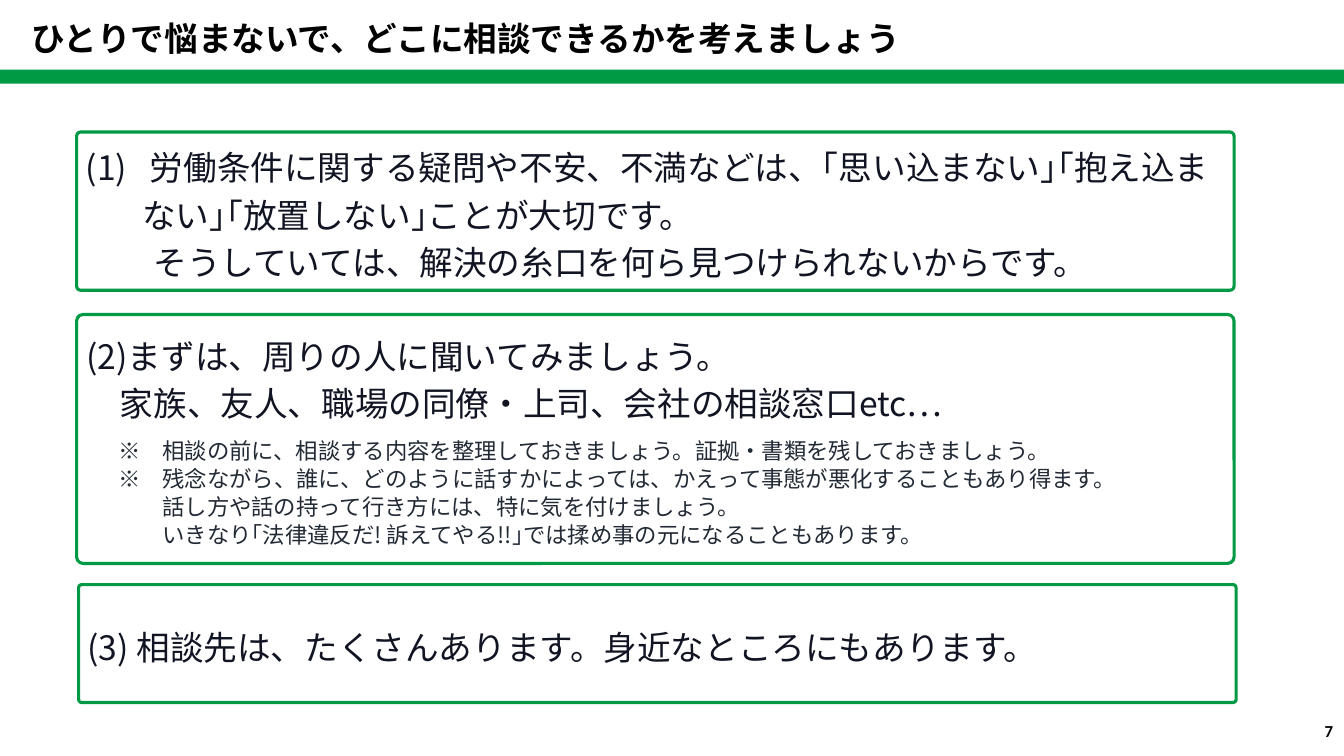
from lxml import etree
from pptx import Presentation, util as u
from pptx.dml.color import RGBColor
from pptx.enum import shapes, text
from pptx.oxml.ns import qn

COLORS = {"green": "009944", "white": "FFFFFF", "body": "111422",
          "note": "222A35", "black": "000000"}
JAPANESE = "Noto Sans CJK JP"
TOP, MIDDLE = text.MSO_ANCHOR.TOP, text.MSO_ANCHOR.MIDDLE


def color(name):
    return RGBColor.from_string(COLORS[name])


def add_panel(page, kind, place, fill=None, line=None):
    """Add a flat shape with an optional fill and outline."""
    panel = page.shapes.add_shape(kind, *map(u.Inches, place))
    panel.shadow.inherit = False
    if fill:
        panel.fill.solid()
        panel.fill.fore_color.rgb = color(fill)
    else:
        panel.fill.background()
    if line:
        panel.line.color.rgb = color(line)
        panel.line.width = u.Pt(2.25)
    else:
        panel.line.fill.background()
    return panel


def format_span(span, size, ink, font=JAPANESE, bold=False):
    span.font.size = u.Pt(size)
    span.font.bold = bold
    span.font.name = font
    span.font.color.rgb = color(ink)
    east_asian = etree.SubElement(span.font._element, qn("a:ea"))
    east_asian.set("typeface", font)


def write_lines(panel, lines, size, spacing, ink, anchor=MIDDLE, top=0.04):
    """Write (left indent, text) pairs with fixed line spacing."""
    frame = panel.text_frame
    frame.word_wrap = True
    frame.vertical_anchor = anchor
    frame.margin_left, frame.margin_top = u.Inches(0.08), u.Inches(top)
    frame.margin_right = frame.margin_bottom = u.Inches(0.04)
    for index, (indent, words) in enumerate(lines):
        para = frame.add_paragraph() if index else frame.paragraphs[0]
        para.text = words
        para.alignment = text.PP_ALIGN.LEFT
        para.line_spacing = u.Pt(spacing)
        para._p.get_or_add_pPr().set("marL", str(u.Inches(indent)))
        format_span(para.runs[0], size, ink)


def number_paragraph(para, hang):
    """Give a paragraph an automatic (1) with a hanging indent."""
    properties = para._p.get_or_add_pPr()
    properties.set("indent", str(-u.Inches(hang)))
    font = etree.SubElement(properties, qn("a:buFont"))
    font.set("typeface", JAPANESE)
    number = etree.SubElement(properties, qn("a:buAutoNum"))
    number.set("type", "arabicParenBoth")


def add_rounded(page, place, framed=True):
    look = ("white", "green") if framed else ()
    panel = add_panel(page, shapes.MSO_SHAPE.ROUNDED_RECTANGLE, place, *look)
    panel.adjustments[0] = 0.026
    return panel


def add_label(page, place, words, size, font=JAPANESE,
              align=text.PP_ALIGN.LEFT, anchor=TOP):
    box = page.shapes.add_textbox(*map(u.Inches, place))
    frame = box.text_frame
    frame.word_wrap = True
    frame.vertical_anchor = anchor
    para = frame.paragraphs[0]
    para.text = words
    para.alignment = align
    format_span(para.runs[0], size, "black", font, bold=True)


def main():
    deck = Presentation()
    deck.slide_width, deck.slide_height = u.Inches(13.33), u.Inches(7.5)
    page = deck.slides.add_slide(deck.slide_layouts[6])

    # Third point
    places = add_rounded(page, (0.78, 5.8, 11.48, 1.17))
    write_lines(places, [
        (0, "(3) 相談先は、たくさんあります。身近なところにもあります。"),
    ], 24, 34, "body")

    # Second point
    people = add_rounded(page, (0.76, 3.12, 11.48, 2.47))
    write_lines(people, [
        (0, "(2)まずは、周りの人に聞いてみましょう。"),
        (0.33, "家族、友人、職場の同僚・上司、会社の相談窓口etc…"),
    ], 24, 34, "body", TOP, 0.12)

    # First point, numbered automatically
    worries = add_rounded(page, (0.76, 1.31, 11.48, 1.57))
    write_lines(worries, [
        (0.56, " 労働条件に関する疑問や不安、不満などは、｢思い込まない｣"
               "｢抱え込まない｣｢放置しない｣ことが大切です。"),
        (0.67, "そうしていては、解決の糸口を何ら見つけられないからです。"),
    ], 24, 34, "body")
    number_paragraph(worries.text_frame.paragraphs[0], 0.56)

    # Notes under the second point
    notes = add_rounded(page, (1.08, 4.18, 11.02, 1.41), framed=False)
    write_lines(notes, [
        (0, "※　相談の前に、相談する内容を整理しておきましょう。"
            "証拠・書類を残しておきましょう。"),
        (0, "※　残念ながら、誰に、どのように話すかによっては、"
            "かえって事態が悪化することもあり得ます。"),
        (0.44, "話し方や話の持って行き方には、特に気を付けましょう。"),
        (0.44, "いきなり｢法律違反だ! 訴えてやる!!｣では"
               "揉め事の元になることもあります。"),
    ], 16, 20, "note")

    # Title, rule and page number
    add_panel(page, shapes.MSO_SHAPE.RECTANGLE, (0, 0.69, 13.33, 0.14), "green")
    add_label(page, (0.21, 0.13, 12.84, 0.5),
              "ひとりで悩まないで、どこに相談できるかを考えましょう", 24)
    add_label(page, (10.21, 7.05, 3.11, 0.4), "7", 12, "Calibri",
              text.PP_ALIGN.RIGHT, MIDDLE)

    deck.save("out.pptx")


if __name__ == "__main__":
    main()
